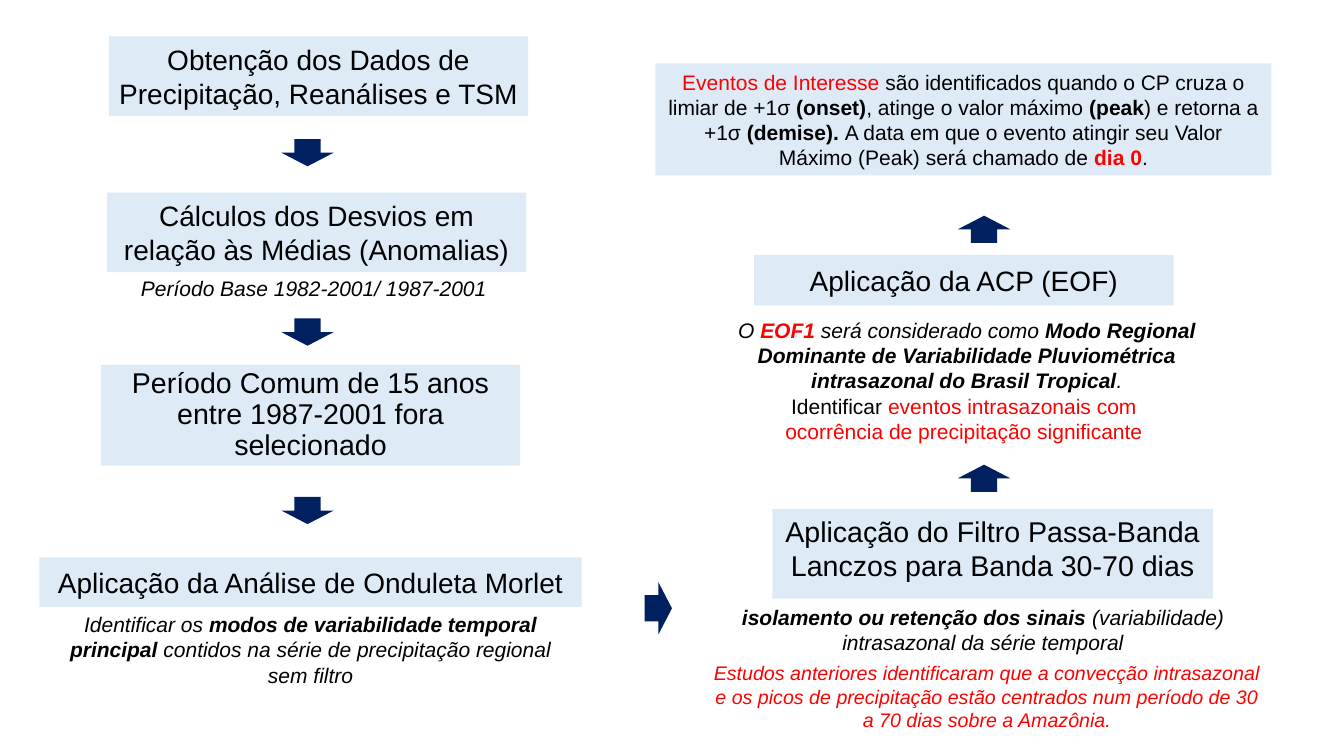
from pptx import Presentation
from pptx import util as u
from pptx.dml.color import RGBColor
from pptx.enum import shapes, text

BLACK = RGBColor(0x00, 0x00, 0x00)
RED = RGBColor(0xFF, 0x00, 0x00)
PALE_BLUE = RGBColor(0xDE, 0xEB, 0xF7)
NAVY = RGBColor(0x00, 0x20, 0x60)
FONT = "Arial"
PX = 9144
SLIDE_SIZE = (1333, 750)
ARROW_SIZE = (52, 27)

# Run styles: b = bold, i = italic, r = red
STEPS = [
    ((108, 36, 416, 79), [("Obtenção dos Dados de Precipitação, Reanálises e TSM", "")], {}),
    ((106, 191, 416, 79), [("Cálculos dos Desvios em relação às Médias (Anomalias)", "")], {}),
    ((100, 362, 416, 100), [("Período Comum de 15 anos entre 1987-2001 fora selecionado", "")],
     {"size": 20.4, "spacing": 0.9}),
    ((39, 553, 538, 49), [("Aplicação da Análise de Onduleta Morlet", "")], {}),
    ((766, 505, 437, 89), [("Aplicação do Filtro Passa-Banda Lanczos para Banda 30-70 dias", "")],
     {"size": 20.4, "anchor": text.MSO_ANCHOR.TOP}),
    ((748, 253, 416, 50), [("Aplicação da ACP (EOF)", "")], {}),
    ((650, 63, 611, 111), [
        ("Eventos de Interesse ", "r"),
        ("são identificados quando o CP cruza o limiar de +1σ ", ""),
        ("(onset)", "b"),
        (", atinge o valor máximo ", ""),
        ("(peak", "b"),
        (") e retorna a +1σ ", ""),
        ("(demise). ", "b"),
        ("A data em que o evento atingir seu Valor Máximo (Peak) será chamado de ", ""),
        ("dia 0", "br"),
        (".", ""),
    ], {"size": 15}),
]

NOTES = [
    ((130, 268, 367, 35), [("Período Base 1982-2001/ 1987-2001", "i")],
     {"align": text.PP_ALIGN.LEFT, "wrap": False}),
    ((39, 602, 538, 79), [
        ("Identificar os ", "i"),
        ("modos de variabilidade temporal principal ", "bi"),
        ("contidos na série de precipitação regional sem filtro", "i"),
    ], {}),
    ((706, 595, 538, 61), [
        ("isolamento ou retenção dos sinais ", "bi"),
        ("(variabilidade) intrasazonal da série temporal", "i"),
    ], {}),
    ((696, 651, 566, 79), [
        ("Estudos anteriores identificaram que a convecção intrasazonal e os picos de "
         "precipitação estão centrados num período de 30 a 70 dias sobre a Amazônia.", "ir"),
    ], {"size": 14}),
    ((706, 310, 506, 93), [
        ("O ", "i"),
        ("EOF1 ", "bir"),
        ("será considerado como ", "i"),
        ("Modo Regional Dominante de Variabilidade Pluviométrica intrasazonal "
         "do Brasil Tropical", "bi"),
        (".", "i"),
    ], {}),
    ((734, 385, 444, 61), [
        ("Identificar ", ""),
        ("eventos intrasazonais com ocorrência de precipitação significante", "r"),
    ], {}),
]

DOWN, RIGHT, UP = 0, 270, 180
ARROWS = [
    (279, 138, DOWN), (279, 316, DOWN), (279, 493, DOWN),
    (627, 590, RIGHT),
    (950, 461, UP), (950, 214, UP),
]


def emu(*lengths):
    return [u.Emu(length * PX) for length in lengths]


def write(frame, runs, size=15, align=text.PP_ALIGN.CENTER,
          anchor=text.MSO_ANCHOR.TOP, spacing=None, wrap=True):
    frame.word_wrap = wrap
    frame.vertical_anchor = anchor
    paragraph = frame.paragraphs[0]
    paragraph.alignment = align
    if spacing:
        paragraph.line_spacing = spacing
    for words, style in runs:
        run = paragraph.add_run()
        run.text = words
        run.font.name = FONT
        run.font.size = u.Pt(size)
        run.font.bold = "b" in style
        run.font.italic = "i" in style
        run.font.color.rgb = RED if "r" in style else BLACK


def add_filled(slide, kind, place, color):
    shape = slide.shapes.add_shape(kind, *emu(*place))
    shape.shadow.inherit = False
    shape.fill.solid()
    shape.fill.fore_color.rgb = color
    shape.line.fill.background()
    return shape


def main():
    deck = Presentation()
    deck.slide_width, deck.slide_height = emu(*SLIDE_SIZE)
    slide = deck.slides.add_slide(deck.slide_layouts[6])

    for place, runs, look in STEPS:
        step = add_filled(slide, shapes.MSO_SHAPE.RECTANGLE, place, PALE_BLUE)
        write(step.text_frame, runs,
              **{"size": 20, "anchor": text.MSO_ANCHOR.MIDDLE, **look})

    for place, runs, look in NOTES:
        note = slide.shapes.add_textbox(*emu(*place))
        write(note.text_frame, runs, **look)

    for left, top, turn in ARROWS:
        arrow = add_filled(slide, shapes.MSO_SHAPE.DOWN_ARROW, (left, top, *ARROW_SIZE), NAVY)
        arrow.rotation = turn

    deck.save("out.pptx")


if __name__ == "__main__":
    main()
